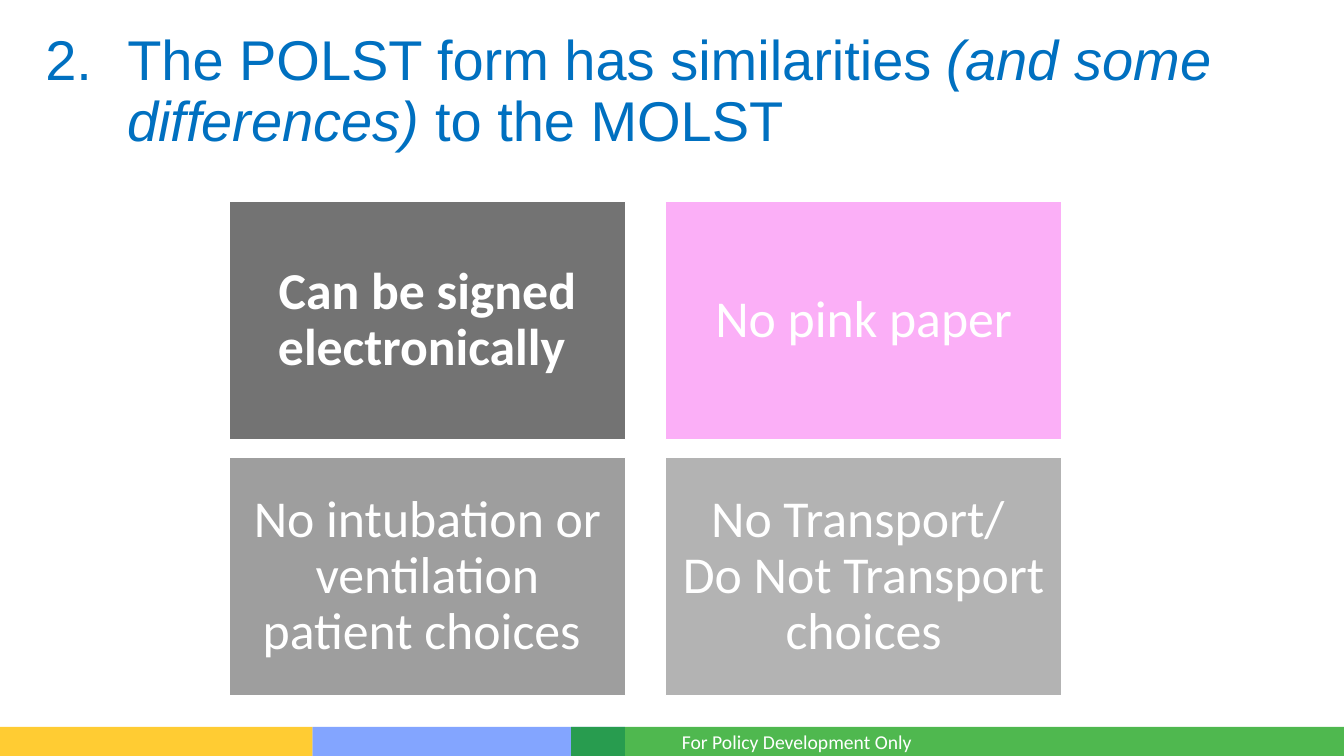
from lxml import etree
from pptx import Presentation
from pptx import util as u
from pptx.dml.color import RGBColor
from pptx.enum import shapes, text
from pptx.oxml import ns

Pt = u.Pt
WHITE = RGBColor(0xFF, 0xFF, 0xFF)
TITLE_BLUE = RGBColor(0x00, 0x70, 0xC0)
BAND_YELLOW = RGBColor(0xFF, 0xC0, 0x00)
BAND_BLUE = RGBColor(0x5E, 0x8B, 0xFF)
BAND_GREEN = RGBColor(0x00, 0x99, 0x00)
PINK = RGBColor(0xFB, 0xAF, 0xF7)
DARK_GREY = RGBColor(0x73, 0x73, 0x73)
MID_GREY = RGBColor(0x9E, 0x9E, 0x9E)
LIGHT_GREY = RGBColor(0xB3, 0xB3, 0xB3)


def write(paragraph, words, *, size, font, color, bold=False, italic=False):
    """Append words to the paragraph; a line break is given as \\v."""
    for index, line in enumerate(words.split("\v")):
        if index:
            paragraph.add_line_break()
        run = paragraph.add_run()
        run.text = line
        run.font.size = Pt(size)
        run.font.name = font
        run.font.color.rgb = color
        run.font.bold = bold
        run.font.italic = italic


def add_block(slide, left, top, width, height, color, opacity=100):
    block = slide.shapes.add_shape(shapes.MSO_SHAPE.RECTANGLE,
                                   Pt(left), Pt(top), Pt(width), Pt(height))
    block.shadow.inherit = False
    block.fill.solid()
    block.fill.fore_color.rgb = color
    block.line.fill.background()
    if opacity < 100:
        rgb = block.fill._xPr.find(".//" + ns.qn("a:srgbClr"))
        etree.SubElement(rgb, ns.qn("a:alpha"), val=str(opacity * 1000))
    return block


def build_footer(slide, left, top, width, height):
    # Translucent bands; green overlaps the end of blue
    for start, end, color, opacity in ((223.2, 446.4, BAND_BLUE, 77),
                                       (0, 223.2, BAND_YELLOW, 80),
                                       (408, width, BAND_GREEN, 69)):
        add_block(slide, left + start, top, end - start, height, color, opacity)

    # Footer note
    note = slide.shapes.add_textbox(Pt(left + width / 2), Pt(top - 1.6),
                                    Pt(width / 2), Pt(24.2)).text_frame
    note.word_wrap = True
    write(note.paragraphs[0], "For Policy Development Only",
          size=14, font="Calibri", color=WHITE)


def build_cards(slide, left, top, width, height):
    cards = (("Can be signed electronically ", DARK_GREY, True),
             ("No pink paper", PINK, False),
             ("No intubation or ventilation patient choices ", MID_GREY, False),
             ("No Transport/ \vDo Not Transport choices", LIGHT_GREY, False))
    column_gap, row_gap = 28.4, 13
    card_width = (width - column_gap) / 2
    card_height = (height - row_gap) / 2
    for index, (words, color, bold) in enumerate(cards):
        row, column = divmod(index, 2)
        card = add_block(slide, left + column * (card_width + column_gap),
                         top + row * (card_height + row_gap),
                         card_width, card_height, color)
        card.line.color.rgb = WHITE
        card.line.width = Pt(1)
        frame = card.text_frame
        frame.word_wrap = True
        frame.vertical_anchor = text.MSO_ANCHOR.MIDDLE
        frame.margin_left = frame.margin_right = Pt(10)
        frame.margin_top = frame.margin_bottom = Pt(10)
        label = frame.paragraphs[0]
        label.alignment = text.PP_ALIGN.CENTER
        label.line_spacing = 0.9
        write(label, words, size=37, font="Calibri", color=WHITE, bold=bold)


def build_title(slide, left, top, width, height):
    title = slide.shapes.title
    title.left, title.top = Pt(left), Pt(top)
    title.width, title.height = Pt(width), Pt(height)
    frame = title.text_frame
    frame.word_wrap = True
    frame.auto_size = text.MSO_AUTO_SIZE.NONE
    frame.vertical_anchor = text.MSO_ANCHOR.MIDDLE
    heading = frame.paragraphs[0]

    # Numbered from 2 with a hanging indent
    properties = heading._p.get_or_add_pPr()
    properties.set("marL", str(Pt(58.5)))
    properties.set("indent", str(-Pt(58.5)))
    etree.SubElement(properties, ns.qn("a:buFont"), typeface="+mj-lt")
    etree.SubElement(properties, ns.qn("a:buAutoNum"),
                     type="arabicPeriod", startAt="2")
    heading.alignment = text.PP_ALIGN.LEFT
    heading.line_spacing = 0.9
    for words, italic in (("The POLST form has similarities ", False),
                          ("(and some differences) ", True),
                          ("to the MOLST", False)):
        write(heading, words, size=40, font="Arial", color=TITLE_BLUE,
              italic=italic)


def main():
    deck = Presentation()
    deck.slide_width, deck.slide_height = Pt(960), Pt(540)
    title_only = deck.slide_layouts[5]
    slide = deck.slides.add_slide(title_only)
    build_footer(slide, 0, 519.1, 960, 20.9)
    build_cards(slide, 163.7, 144, 594.8, 352.8)
    build_title(slide, 25.2, 8.6, 910, 115.2)
    deck.save("out.pptx")


if __name__ == "__main__":
    main()
